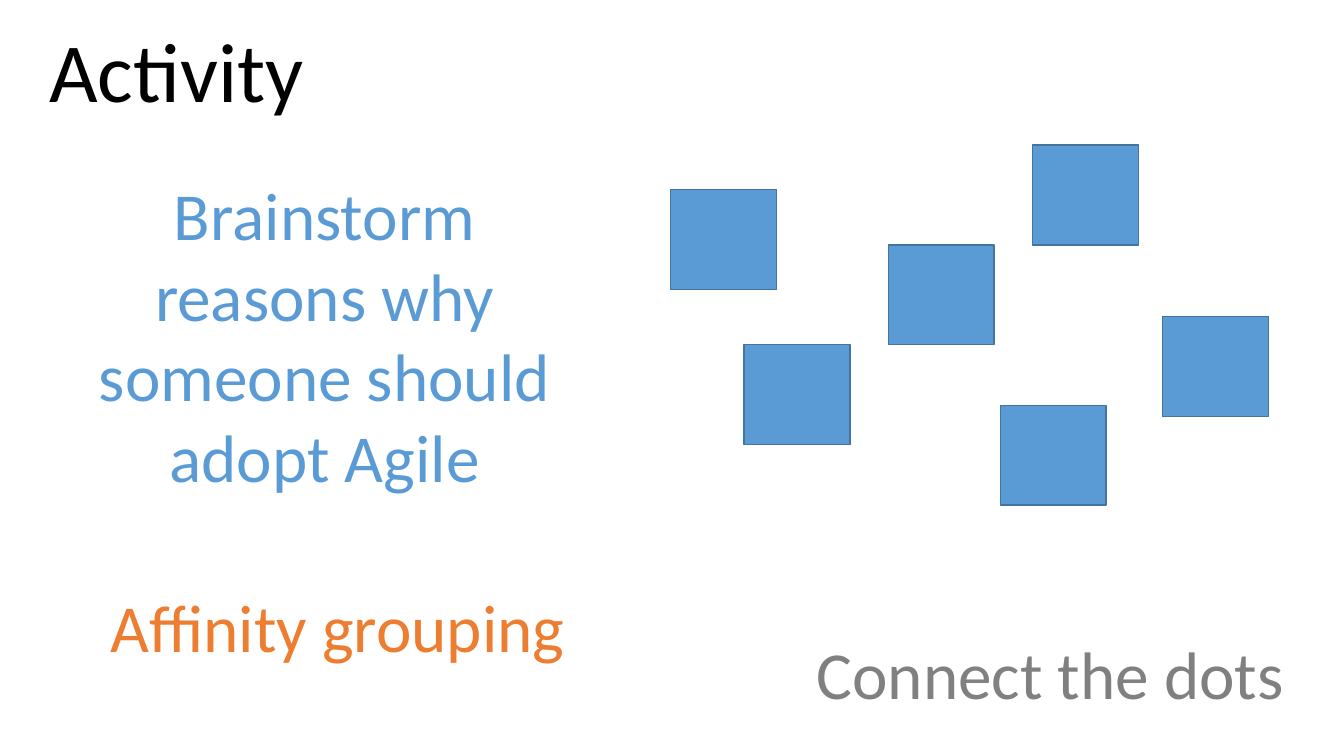
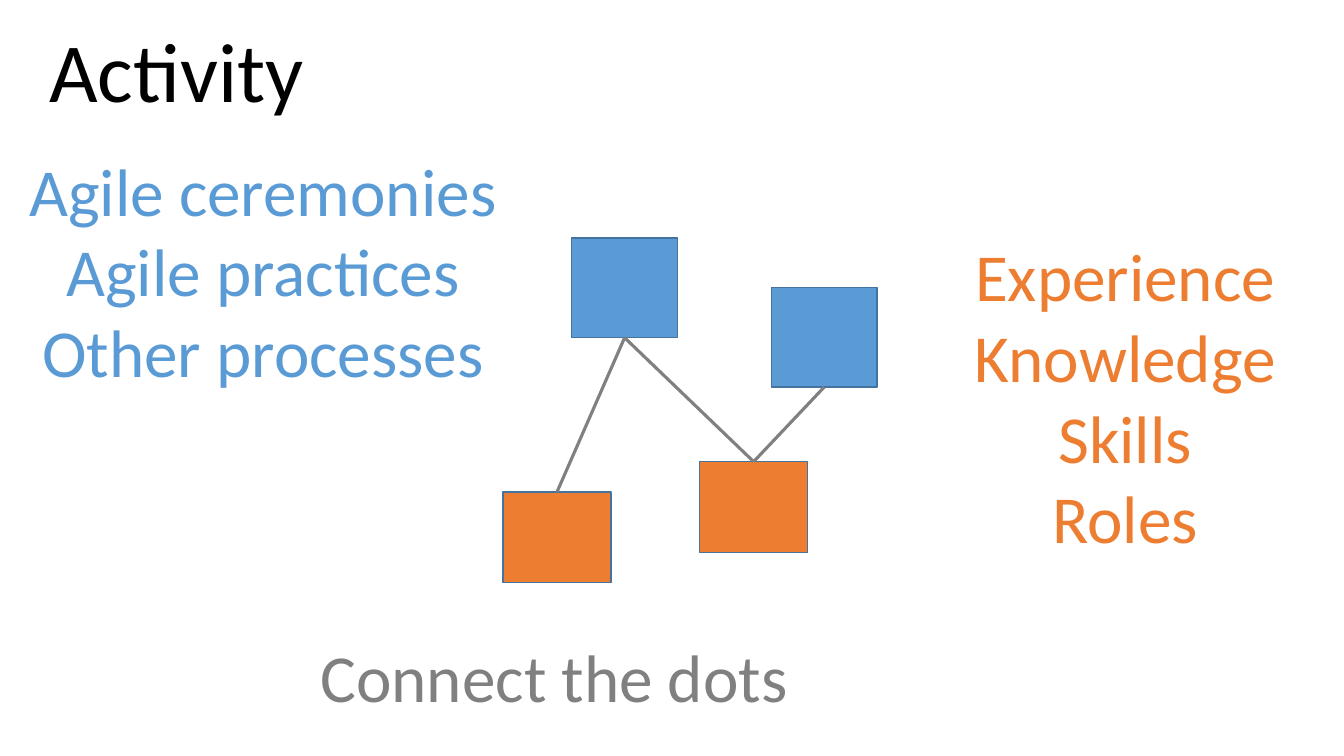
import pptx
import pptx.dml.color
import pptx.enum.shapes
import pptx.enum.text
import pptx.oxml.ns
import pptx.util
from lxml import etree
from pptx.util import Inches

FONT = "Calibri"
COLOURS = {
    "title": "000000",
    "blue": "5B9BD5",
    "orange": "ED7D31",
    "grey": "808080",
    "outline": "43739E",
}
CENTER = pptx.enum.text.PP_ALIGN.CENTER
LEFT = pptx.enum.text.PP_ALIGN.LEFT
TITLE_ONLY_LAYOUT = 5
BLUE_CARD = (1.05, 0.99)
ORANGE_CARD = (1.07, 0.9)
TOP, BOTTOM = 0, 2


def colour(name):
    return pptx.dml.color.RGBColor.from_string(COLOURS[name])


def fill_text(shape, lines, colour_name, size=48, align=CENTER, wrap=False):
    """Write one paragraph per line, all in the same style."""
    frame = shape.text_frame
    frame.text = "\n".join(lines)
    frame.word_wrap = wrap
    frame.auto_size = pptx.enum.text.MSO_AUTO_SIZE.SHAPE_TO_FIT_TEXT
    frame.vertical_anchor = pptx.enum.text.MSO_ANCHOR.TOP
    for paragraph in frame.paragraphs:
        paragraph.alignment = align
        for run in paragraph.runs:
            run.font.name = FONT
            run.font.size = pptx.util.Pt(size)
            run.font.color.rgb = colour(colour_name)


def add_titled_slide(presentation, title):
    slide = presentation.slides.add_slide(presentation.slide_layouts[TITLE_ONLY_LAYOUT])
    shape = slide.shapes.title
    shape.left, shape.top = Inches(0.37), Inches(0.13)
    shape.width, shape.height = Inches(2.76), Inches(1.11)
    fill_text(shape, [title], "title", size=60)
    return slide


def add_text(slide, left, top, width, height, lines, colour_name, **style):
    box = slide.shapes.add_textbox(Inches(left), Inches(top), Inches(width), Inches(height))
    fill_text(box, lines, colour_name, **style)


def add_caption(slide, left, top):
    add_text(slide, left, top, 4.89, 0.91, ["Connect the dots"], "grey", align=LEFT)


def add_card(slide, left, top, size, colour_name):
    width, height = size
    card = slide.shapes.add_shape(
        pptx.enum.shapes.MSO_SHAPE.RECTANGLE,
        Inches(left), Inches(top), Inches(width), Inches(height),
    )
    card.shadow.inherit = False
    card.fill.solid()
    card.fill.fore_color.rgb = colour(colour_name)
    card.line.color.rgb = colour("outline")
    card.line.width = pptx.util.Pt(1)
    return card


def connect_cards(slide, upper, lower):
    connector = slide.shapes.add_connector(pptx.enum.shapes.MSO_CONNECTOR.STRAIGHT, 0, 0, 0, 0)
    connector.begin_connect(upper, BOTTOM)
    connector.end_connect(lower, TOP)
    connector.line.color.rgb = colour("grey")
    connector.line.width = pptx.util.Pt(2.25)
    properties = connector.element.find(pptx.oxml.ns.qn("p:spPr"))
    etree.SubElement(properties, pptx.oxml.ns.qn("a:effectLst"))


def build_brainstorm_slide(presentation):
    slide = add_titled_slide(presentation, "Activity")
    add_text(slide, 0.53, 1.67, 5.38, 3.33,
             ["Brainstorm reasons why someone should adopt Agile"], "blue", wrap=True)
    card_positions = [(6.65, 1.88), (7.38, 3.42), (8.81, 2.43),
                      (10.24, 1.44), (9.92, 4.02), (11.53, 3.14)]
    for left, top in card_positions:
        add_card(slide, left, top, BLUE_CARD, "blue")
    add_caption(slide, 8, 6.22)
    add_text(slide, 0.79, 5.76, 5.27, 0.91, ["Affinity grouping "], "orange", wrap=True)


def build_connection_slide(presentation):
    slide = add_titled_slide(presentation, "Activity")
    add_text(slide, 0.17, 1.43, 4.88, 2.52,
             ["Agile ceremonies", "Agile practices", "Other processes"], "blue")
    add_text(slide, 9.55, 2.28, 3.22, 3.33,
             ["Experience", "Knowledge", "Skills", "Roles"], "orange")
    blue_left = add_card(slide, 5.67, 2.36, BLUE_CARD, "blue")
    blue_right = add_card(slide, 7.65, 2.85, BLUE_CARD, "blue")
    orange_left = add_card(slide, 4.99, 4.88, ORANGE_CARD, "orange")
    orange_right = add_card(slide, 6.94, 4.58, ORANGE_CARD, "orange")
    for upper, lower in [(blue_right, orange_right), (blue_left, orange_right),
                         (blue_left, orange_left)]:
        connect_cards(slide, upper, lower)
    add_caption(slide, 3.08, 6.25)


def main():
    presentation = pptx.Presentation()
    presentation.slide_width = Inches(13.33)
    presentation.slide_height = Inches(7.5)
    build_brainstorm_slide(presentation)
    build_connection_slide(presentation)
    presentation.save("out.pptx")


if __name__ == "__main__":
    main()
